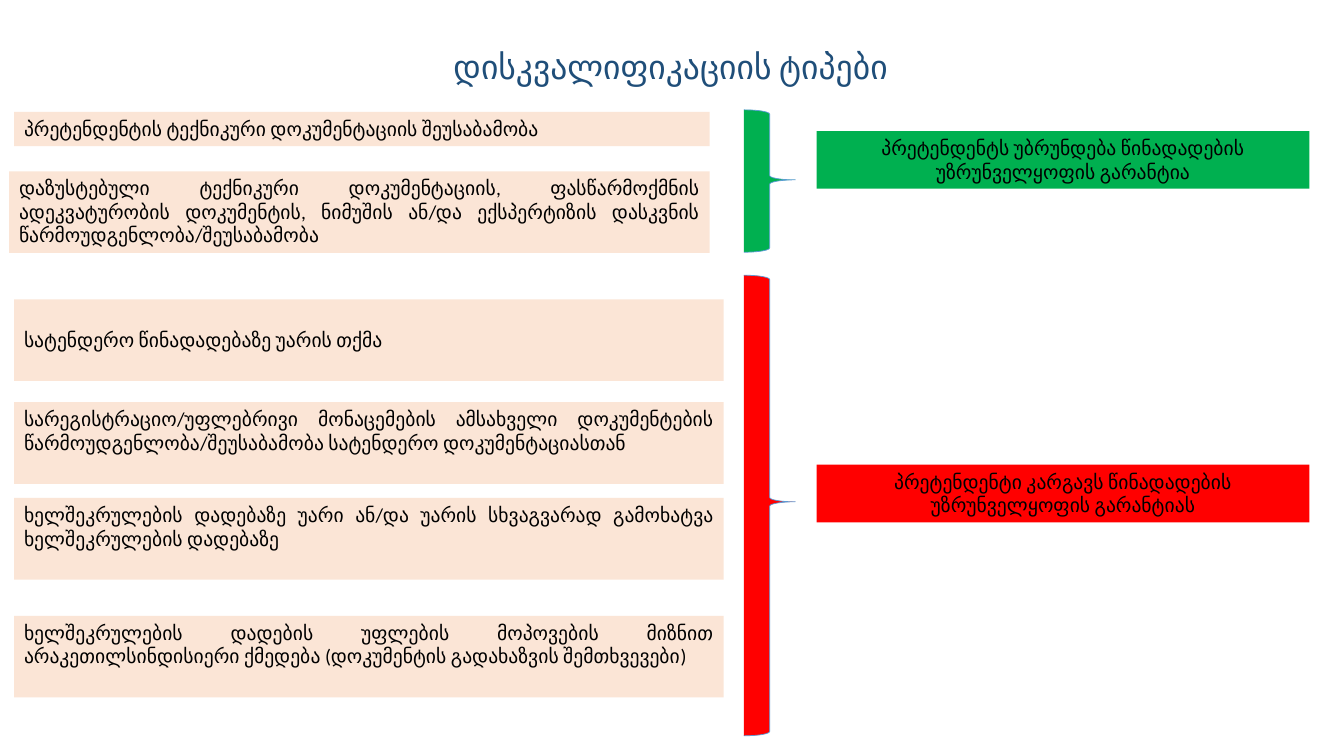
from pptx import Presentation
from pptx.dml.color import RGBColor
from pptx.enum import shapes, text
from pptx.util import Pt

NAVY = RGBColor(0x1F, 0x4E, 0x79)
PEACH = RGBColor(0xFB, 0xE5, 0xD6)
GREEN = RGBColor(0x00, 0xB0, 0x50)
RED = RGBColor(0xFF, 0x00, 0x00)
BLUE = RGBColor(0x5B, 0x9B, 0xD5)
BLACK = RGBColor(0x00, 0x00, 0x00)

FONT = "Calibri"
TOP, MIDDLE = text.MSO_ANCHOR.TOP, text.MSO_ANCHOR.MIDDLE
JUSTIFY, CENTER = text.PP_ALIGN.JUSTIFY, text.PP_ALIGN.CENTER

RETURNED_REASONS = [
    (0, 1.4, 496.8, 24.5, TOP, "პრეტენდენტის ტექნიკური დოკუმენტაციის შეუსაბამობა"),
    (-3.6, 43.9, 500.4, 58.3, TOP,
     "დაზუსტებული ტექნიკური დოკუმენტაციის, ფასწარმოქმნის ადეკვატურობის დოკუმენტის, "
     "ნიმუშის ან/და ექსპერტიზის დასკვნის წარმოუდგენლობა/შეუსაბამობა"),
]
LOST_REASONS = [
    (0, 17.2, 506.9, 58.3, MIDDLE, "სატენდერო წინადადებაზე უარის თქმა"),
    (0, 90.7, 506.9, 58.3, TOP,
     "სარეგისტრაციო/უფლებრივი მონაცემების ამსახველი დოკუმენტების "
     "წარმოუდგენლობა/შეუსაბამობა სატენდერო დოკუმენტაციასთან"),
    (0, 159.1, 506.9, 58.3, TOP,
     "ხელშეკრულების დადებაზე უარი ან/და უარის სხვაგვარად გამოხატვა "
     "ხელშეკრულების დადებაზე"),
    (0, 243.3, 506.9, 58.3, TOP,
     "ხელშეკრულების დადების უფლების მოპოვების მიზნით არაკეთილსინდისიერი ქმედება "
     "(დოკუმენტის გადახაზვის შემთხვევები)"),
]


def write(frame, words, size, color, align, anchor):
    """Put one formatted paragraph into a text frame."""
    frame.word_wrap = True
    frame.auto_size = text.MSO_AUTO_SIZE.NONE
    frame.vertical_anchor = anchor
    paragraph = frame.paragraphs[0]
    paragraph.alignment = align
    run = paragraph.add_run()
    run.text = words
    run.font.name, run.font.size = FONT, Pt(size)
    run.font.color.rgb = color


def add_filled(slide, kind, box, fill):
    """Add a flat filled shape without an outline."""
    shape = slide.shapes.add_shape(kind, *map(Pt, box))
    shape.shadow.inherit = False
    shape.fill.solid()
    shape.fill.fore_color.rgb = fill
    shape.line.fill.background()
    return shape


def add_card(slide, box, fill, words, align, anchor):
    """Add a filled rectangle with text."""
    card = add_filled(slide, shapes.MSO_SHAPE.RECTANGLE, box, fill)
    write(card.text_frame, words, 14, BLACK, align, anchor)


def add_heading(slide, box, words):
    """Place the slide title in the given box."""
    heading = slide.shapes.title
    heading.left, heading.top, heading.width, heading.height = map(Pt, box)
    write(heading.text_frame, words, 24, NAVY, CENTER, MIDDLE)


def add_group(slide, box, color, reasons, outcome, outcome_offset):
    """Draw the reasons, their brace and the outcome within the box."""
    left, top, width, height = box
    for dx, dy, reason_width, reason_height, anchor, words in reasons:
        add_card(slide, (left + dx, top + dy, reason_width, reason_height),
                 PEACH, words, JUSTIFY, anchor)
    brace = add_filled(slide, shapes.MSO_SHAPE.RIGHT_BRACE,
                       (left + 521.3, top, 36.7, height), color)
    brace.adjustments[0], brace.adjustments[1] = 0.083, 0.492
    brace.line.color.rgb = BLUE
    brace.line.width = Pt(0.5)
    outcome_width = 352
    add_card(slide, (left + width - outcome_width, top + outcome_offset, outcome_width, 41.2),
             color, outcome, CENTER, TOP)


def main():
    """Build and save the disqualification slide."""
    deck = Presentation()
    deck.slide_width, deck.slide_height = Pt(960), Pt(540)
    slide = deck.slides.add_slide(deck.slide_layouts[5])
    add_heading(slide, (68.4, 28.8, 821.5, 36.4), "დისკვალიფიკაციის ტიპები")
    add_group(slide, (10.1, 78.5, 925.2, 101.7), GREEN, RETURNED_REASONS,
              "პრეტენდენტს უბრუნდება წინადადების უზრუნველყოფის გარანტია", 15.1)
    add_group(slide, (10.1, 196.6, 925.2, 329), RED, LOST_REASONS,
              "პრეტენდენტი კარგავს წინადადების უზრუნველყოფის გარანტიას", 135.3)
    deck.save("out.pptx")


if __name__ == "__main__":
    main()
